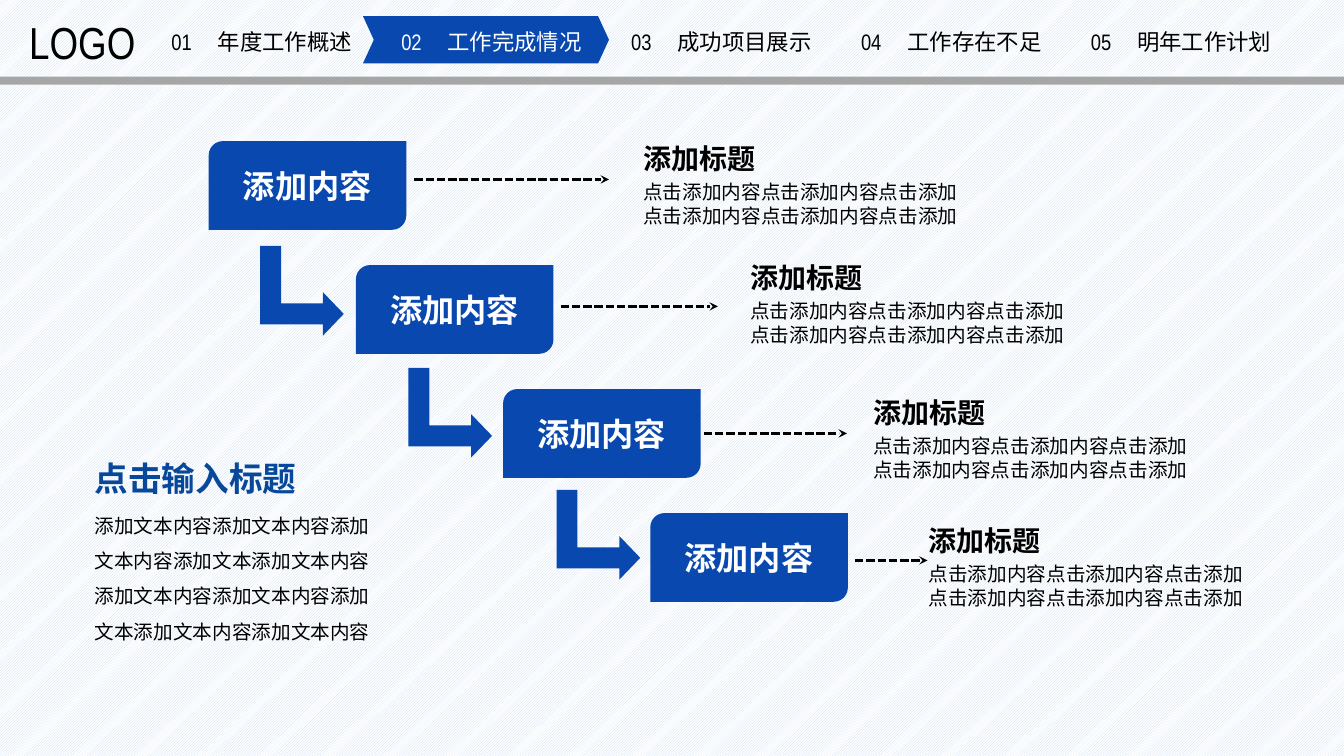
from lxml.etree import SubElement
from pptx import Presentation
from pptx.dml.color import RGBColor
from pptx.enum.dml import MSO_LINE, MSO_PATTERN
from pptx.enum.shapes import MSO_CONNECTOR, MSO_SHAPE as SHAPE
from pptx.enum.text import MSO_ANCHOR, MSO_AUTO_SIZE, PP_ALIGN
from pptx.oxml.ns import qn
from pptx.util import Inches, Pt

BLUE = RGBColor(0x08, 0x48, 0xAF)
TITLE_BLUE = RGBColor(0x08, 0x48, 0x9B)
GRAY = RGBColor(0xA6, 0xA6, 0xA6)
PALE = RGBColor(0xC6, 0xD9, 0xF1)
WHITE = RGBColor(0xFF, 0xFF, 0xFF)
BLACK = RGBColor(0, 0, 0)
HAN, NARROW, LATIN = "Noto Sans CJK SC", "Arial Narrow", "Arial"

SECTIONS = ["年度工作概述", "工作完成情况", "成功项目展示", "工作存在不足", "明年工作计划"]
ACTIVE = 1
DETAIL = "点击添加内容点击添加内容点击添加"
SUMMARY = ("添加文本内容添加文本内容添加文本内容添加文本添加文本内容"
           "添加文本内容添加文本内容添加文本添加文本内容添加文本内容")
STEPS = [
    {"dash": (4.11, 6.04, 1.78), "note": (6.24, 1.31)},
    {"dash": (5.56, 7.12, 3.04), "note": (7.3, 2.49)},
    {"dash": (6.98, 8.4, 4.3), "note": (8.52, 3.83)},
    {"dash": (8.48, 9.2, 5.56), "note": (9.07, 5.1)},
]


def set_frame(frame, insets=(0.1, 0.05), **formats):
    """Apply the insets and format values to a text frame."""
    across, down = map(Inches, insets)
    values = {"word_wrap": True, "margin_left": across, "margin_right": across,
              "margin_top": down, "margin_bottom": down, **formats}
    for name, value in values.items():
        setattr(frame, name, value)


def add_span(para, text, size, color, font=HAN, bold=False):
    """Append a formatted run to a paragraph."""
    span = para.add_run()
    span.text = text
    values = {"size": Pt(size), "bold": bold, "name": font}
    for name, value in values.items():
        setattr(span.font, name, value)
    span.font.color.rgb = color
    SubElement(span.font._element, qn("a:ea"), typeface=HAN)


def add_text(page, place, **frame_formats):
    """Add a text box and return its first paragraph."""
    box = page.shapes.add_textbox(*map(Inches, place))
    set_frame(box.text_frame, **frame_formats)
    return box.text_frame.paragraphs[0]


def add_block(page, kind, place, color, adjustments=()):
    """Add a filled shape without outline or shadow."""
    block = page.shapes.add_shape(kind, *map(Inches, place))
    block.shadow.inherit = False
    block.fill.solid()
    block.fill.fore_color.rgb = color
    block.line.fill.background()
    for index, value in enumerate(adjustments):
        block.adjustments[index] = value
    return block


def add_section(page, index, name):
    """Add one numbered entry of the navigation bar."""
    color = WHITE if index == ACTIVE else BLACK
    para = add_text(page, (1.7 + 2.28 * index, 0.28, 1.99, 0.27), insets=(0, 0),
                    vertical_anchor=MSO_ANCHOR.MIDDLE,
                    auto_size=MSO_AUTO_SIZE.SHAPE_TO_FIT_TEXT)
    tabs = SubElement(para._p.get_or_add_pPr(), qn("a:tabLst"))
    SubElement(tabs, qn("a:tab"), pos=str(Inches(0.46)), algn="l")
    add_span(para, f"{index + 1:02d}\t", 16, color, NARROW)
    add_span(para, name, 16, color)


def add_dash(page, start, end, level):
    """Add a dashed horizontal arrow."""
    dash = page.shapes.add_connector(
        MSO_CONNECTOR.STRAIGHT, *map(Inches, (start, level, end, level)))
    dash.line.color.rgb = BLACK
    dash.line.width = Pt(2)
    dash.line.dash_style = MSO_LINE.SQUARE_DOT
    SubElement(dash.line._get_or_add_ln(), qn("a:tailEnd"), type="stealth")
    SubElement(dash._element.spPr, qn("a:effectLst"))


def add_note(page, left, top):
    """Add a heading with its two detail lines."""
    formats = {"insets": (0.14, 0.07), "vertical_anchor": MSO_ANCHOR.MIDDLE}
    heading = add_text(page, (left, top, 1.78, 0.53), **formats)
    add_span(heading, "添加标题", 20, BLACK, bold=True)
    first = add_text(page, (left, top + 0.47, 4.13, 0.48), **formats)
    add_span(first, DETAIL, 14, BLACK)
    second = first._parent.add_paragraph()
    add_span(second, DETAIL, 14, BLACK, LATIN)


def add_step(page, index, dash, note):
    """Add one stair step with its arrow and note."""
    box = add_block(page, SHAPE.ROUND_2_DIAG_RECTANGLE,
                    (2.07 + 1.46 * index, 1.4 + 1.23 * index, 1.96, 0.88), BLUE, (0.16, 0))
    set_frame(box.text_frame, (0.15, 0.07), vertical_anchor=MSO_ANCHOR.MIDDLE)
    para = box.text_frame.paragraphs[0]
    para.alignment = PP_ALIGN.CENTER
    add_span(para, "添加内容", 23, WHITE, bold=True)
    add_dash(page, *dash)
    add_note(page, *note)
    if index < len(STEPS) - 1:
        bend = add_block(page, SHAPE.BENT_UP_ARROW,
                         (2.55 + 1.47 * index, 2.47 + 1.21 * index, 0.89, 0.83),
                         BLUE, (0.25, 0.26, 0.25))
        bend.rotation = 90


def add_header(page):
    """Add the navigation bar."""
    add_block(page, SHAPE.RECTANGLE, (0, 0.76, 13.33, 0.08), GRAY)
    add_block(page, SHAPE.CHEVRON, (3.6, 0.16, 2.44, 0.47), BLUE, (0.23,))
    for index, name in enumerate(SECTIONS):
        add_section(page, index, name)
    mark = add_text(page, (0.29, 0.15, 1.1, 0.53), insets=(0, 0),
                    vertical_anchor=MSO_ANCHOR.MIDDLE,
                    auto_size=MSO_AUTO_SIZE.SHAPE_TO_FIT_TEXT)
    add_span(mark, "LOGO", 32, BLACK, NARROW)


def add_summary(page):
    """Add the title and paragraph at the lower left."""
    grow = MSO_AUTO_SIZE.SHAPE_TO_FIT_TEXT
    body = add_text(page, (0.84, 4.93, 3.07, 1.5), auto_size=grow)
    body.line_spacing = 1.5
    add_span(body, SUMMARY, 14, BLACK)
    title = add_text(page, (0.84, 4.49, 2.2, 0.5), word_wrap=False, auto_size=grow)
    add_span(title, "点击输入标题", 24, TITLE_BLUE, bold=True)


def main():
    """Build and save the deck."""
    deck = Presentation()
    deck.slide_width, deck.slide_height = Inches(13.33), Inches(7.5)
    page = deck.slides.add_slide(deck.slide_layouts[6])
    backdrop = page.background.fill
    backdrop.patterned()
    backdrop.pattern = MSO_PATTERN.LIGHT_UPWARD_DIAGONAL
    backdrop.fore_color.rgb = PALE
    backdrop.back_color.rgb = WHITE
    add_header(page)
    for index, step in enumerate(STEPS):
        add_step(page, index, **step)
    add_summary(page)
    deck.save("out.pptx")


if __name__ == "__main__":
    main()
